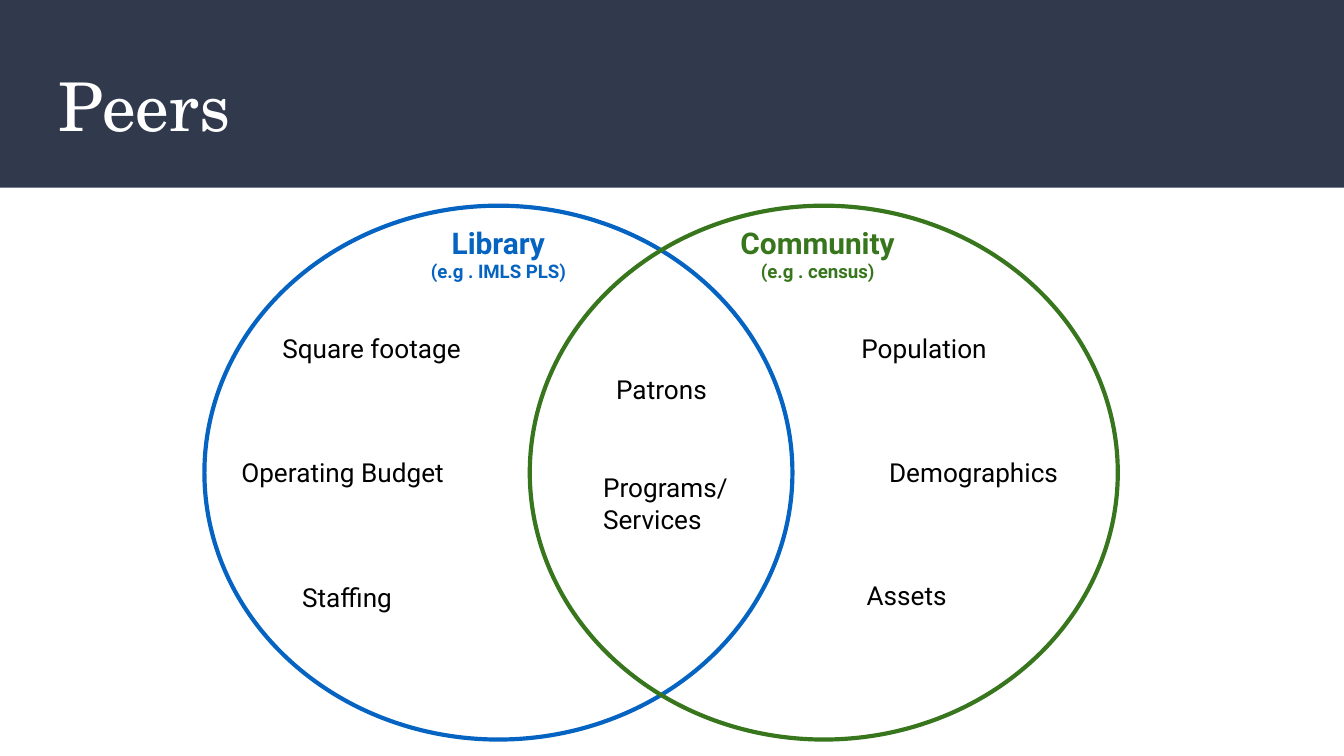
from pptx import Presentation
from pptx import util as u
from pptx.dml.color import RGBColor
from pptx.enum import shapes, text

BLUE, GREEN, NAVY = "0563C1", "38761D", "31394D"


def rgb(hex_str):
    """Turn a hex string into a colour."""
    return RGBColor.from_string(hex_str)


def add_shape(s, kind, box, fill=None, line=None):
    """Add a preset shape with an optional fill and outline."""
    sp = s.shapes.add_shape(kind, *map(u.Pt, box))
    sp.shadow.inherit = False
    if fill:
        sp.fill.solid()
        sp.fill.fore_color.rgb = rgb(fill)
    else:
        sp.fill.background()
    if line:
        sp.line.color.rgb = rgb(line)
        sp.line.width = u.Pt(2.25)
    else:
        sp.line.fill.background()


def add_text(s, box, *lines, sizes=(14,), font="Roboto", color="000000",
             bold=False, align=text.PP_ALIGN.LEFT):
    """Add a text box with one paragraph for each line and size."""
    tf = s.shapes.add_textbox(*map(u.Pt, box)).text_frame
    tf.word_wrap = True
    tf.vertical_anchor = text.MSO_ANCHOR.TOP
    tf.margin_left = tf.margin_right = tf.margin_top = tf.margin_bottom = u.Pt(7.2)
    for i, (line, size) in enumerate(zip(lines, sizes)):
        p = tf.paragraphs[0] if i == 0 else tf.add_paragraph()
        p.alignment = align
        r = p.add_run()
        r.text = line
        r.font.size = u.Pt(size)
        r.font.name = font
        r.font.bold = bold
        r.font.color.rgb = rgb(color)


def add_heading(s, left, width, name, example, color):
    """Add the centred two-line heading of a circle."""
    add_text(s, (left, 113, width, 46), name, example, sizes=(16, 10),
             color=color, bold=True, align=text.PP_ALIGN.CENTER)


def main():
    """Build the Venn diagram slide."""
    prs = Presentation()
    prs.slide_width, prs.slide_height = u.Pt(720), u.Pt(405)
    s = prs.slides.add_slide(prs.slide_layouts[6])

    add_shape(s, shapes.MSO_SHAPE.RECTANGLE, (0, 0, 720, 100.5), fill=NAVY)
    add_text(s, (24.5, 27.4, 671, 49), "Peers", sizes=(36,),
             font="TeX Gyre Schola", color="FFFFFF")

    for left, color in ((109.5, BLUE), (283.8, GREEN)):
        add_shape(s, shapes.MSO_SHAPE.OVAL, (left, 110.2, 315, 286), line=color)
    add_heading(s, 213, 108, "Library", "(e.g . IMLS PLS)", BLUE)
    add_heading(s, 380, 116, "Community", "(e.g . census)", GREEN)

    items = (
        ("Square footage", 144.2, 170.7, 116),
        ("Operating Budget", 122.2, 237.3, 129),
        ("Staffing", 154.8, 304, 88),
        ("Patrons", 323, 193, 69),
        ("Programs/Services", 316, 245.5, 88),
        ("Population", 454.4, 170.7, 88),
        ("Demographics", 469.2, 237.3, 112),
        ("Assets", 457.2, 303, 69),
    )
    for label, left, top, width in items:
        add_text(s, (left, top, width, 31.5), label)

    prs.save("out.pptx")


if __name__ == "__main__":
    main()
